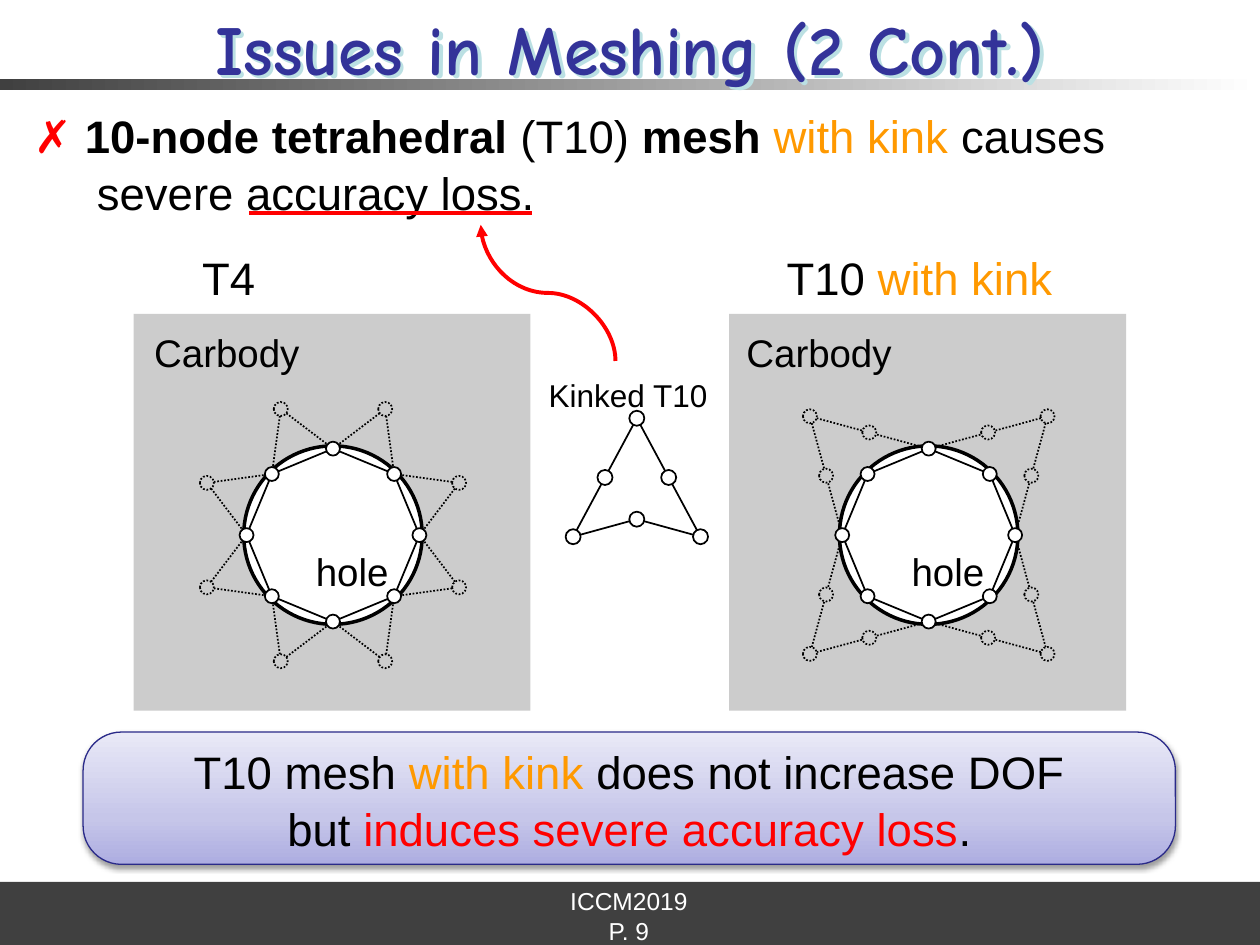
from math import cos, hypot, radians, sin

from lxml import etree
from pptx import Presentation
from pptx.dml.color import RGBColor
from pptx.enum.dml import MSO_LINE
from pptx.enum.shapes import MSO_CONNECTOR, MSO_SHAPE
from pptx.enum.text import MSO_ANCHOR, PP_ALIGN
from pptx.oxml.ns import qn
from pptx.util import Pt

RECT, ROUNDED, OVAL = MSO_SHAPE.RECTANGLE, MSO_SHAPE.ROUNDED_RECTANGLE, MSO_SHAPE.OVAL
STRAIGHT, CURVE = MSO_CONNECTOR.STRAIGHT, MSO_CONNECTOR.CURVE
DOTTED = MSO_LINE.ROUND_DOT
LEFT, CENTER = PP_ALIGN.LEFT, PP_ALIGN.CENTER
TOP, MIDDLE = MSO_ANCHOR.TOP, MSO_ANCHOR.MIDDLE

BLACK, WHITE, RED, ORANGE = "000000", "FFFFFF", "FF0000", "FF9900"
PANEL_GRAY, DARK_GRAY, NAVY = "CCCCCC", "404040", "333399"
PANEL_SIZE = 226.8
RING_RADIUS = 49.4
NODE_SIZE = 8


def color(hex_text):
    return RGBColor.from_string(hex_text)


def style_line(line, line_color, width, dash=None):
    line.color.rgb = color(line_color)
    line.width = Pt(width)
    if dash:
        line.dash_style = dash


def add_box(page, kind, left, top, width, height, fill=None, line=None, weight=1, dash=None):
    box = page.shapes.add_shape(kind, Pt(left), Pt(top), Pt(width), Pt(height))
    box.shadow.inherit = False
    if fill:
        box.fill.solid()
        box.fill.fore_color.rgb = color(fill)
    else:
        box.fill.background()
    if line:
        style_line(box.line, line, weight, dash)
    else:
        box.line.fill.background()
    return box


def add_gradient(box, stops, angle):
    box.fill.gradient()
    box.fill.gradient_angle = angle
    stop_list = box._element.spPr.find(".//" + qn("a:gsLst"))
    for old_stop in list(stop_list):
        stop_list.remove(old_stop)
    for position, stop_color in stops:
        stop = etree.SubElement(stop_list, qn("a:gs"), pos=str(position * 1000))
        etree.SubElement(stop, qn("a:srgbClr"), val=stop_color)


def add_shadow(box, shadow_color, opacity, blur, distance, angle):
    box.shadow.inherit = False
    effects = box._element.spPr.find(qn("a:effectLst"))
    outer = etree.SubElement(effects, qn("a:outerShdw"), blurRad=str(Pt(blur)),
                             dist=str(Pt(distance)), dir=str(angle * 60000), rotWithShape="0")
    tone = etree.SubElement(outer, qn("a:srgbClr"), val=shadow_color)
    etree.SubElement(tone, qn("a:alpha"), val=str(opacity * 1000))


def write_text(box, spans, size=26, font="Arial", align=CENTER, anchor=TOP,
               margin=0, wrap=True, spacing=None, hanging=0):
    """Each span is (text, colour) or (text, colour, bold)."""
    frame = box.text_frame
    frame.word_wrap = wrap
    frame.vertical_anchor = anchor
    frame.margin_left = frame.margin_right = frame.margin_top = frame.margin_bottom = Pt(margin)
    para = frame.paragraphs[0]
    para.alignment = align
    if spacing:
        para.line_spacing = spacing
    if hanging:
        properties = para._p.get_or_add_pPr()
        properties.set("marL", str(Pt(hanging)))
        properties.set("indent", str(-Pt(hanging)))
    for text, text_color, *bold in spans:
        for index, line_text in enumerate(text.split("\n")):
            if index:
                para.add_line_break()
            span = para.add_run()
            span.text = line_text
            span.font.size = Pt(size)
            span.font.name = font
            span.font.bold = bool(bold and bold[0])
            span.font.color.rgb = color(text_color)


def add_text(page, left, top, width, height, spans, **text_format):
    box = page.shapes.add_textbox(Pt(left), Pt(top), Pt(width), Pt(height))
    write_text(box, spans, **text_format)
    return box


def add_line(page, start, end, line_color=BLACK, width=1, dash=None, kind=STRAIGHT):
    line = page.shapes.add_connector(kind, *(Pt(value) for value in (*start, *end)))
    style_line(line.line, line_color, width, dash)
    etree.SubElement(line._element.spPr, qn("a:effectLst"))
    return line


def add_edge(page, start, end, dash=None):
    """Joins two nodes, from rim to rim."""
    dx, dy = end[0] - start[0], end[1] - start[1]
    share = NODE_SIZE / 2 / hypot(dx, dy)
    add_line(page, (start[0] + dx * share, start[1] + dy * share),
             (end[0] - dx * share, end[1] - dy * share), dash=dash)


def add_node(page, point, fill=WHITE, dash=None, size=NODE_SIZE):
    add_box(page, OVAL, point[0] - size / 2, point[1] - size / 2, size, size,
            fill, BLACK, dash=dash)


def midpoint(first, second):
    return (first[0] + second[0]) / 2, (first[1] + second[1]) / 2


def polar(center, radius, degrees):
    angle = radians(degrees)
    return center[0] + radius * cos(angle), center[1] + radius * sin(angle)


def add_mesh_panel(page, left, top, label_offset, outer_radius, outer_step, with_midnodes):
    # Car body, hole and labels
    center = left + 114, top + 126.5
    add_box(page, RECT, left, top, PANEL_SIZE, PANEL_SIZE, PANEL_GRAY)
    add_box(page, OVAL, center[0] - 51, center[1] - 51, 102, 102, WHITE, BLACK, 2)
    carbody = add_box(page, RECT, left + label_offset, top + 8.6, 85, 26.6, PANEL_GRAY)
    write_text(carbody, [("Carbody", BLACK)], size=22)
    add_text(page, left + 92, top + 134, 66, 26.6, [("hole", BLACK)], size=22)

    # Ring of nodes along the hole
    ring = {degrees: polar(center, RING_RADIUS, degrees) for degrees in range(0, 360, 45)}
    for degrees, node in ring.items():
        add_edge(page, node, ring[(degrees + 45) % 360])
    for node in ring.values():
        add_node(page, node)

    # Outer nodes, each joined to the two ring nodes beside it
    for start in range(0, 360, outer_step):
        outer = polar(center, outer_radius, start + outer_step / 2)
        for degrees in (start, (start + outer_step) % 360):
            add_edge(page, outer, ring[degrees], DOTTED)
            if with_midnodes:
                add_node(page, midpoint(outer, ring[degrees]), PANEL_GRAY, DOTTED)
        add_node(page, outer, PANEL_GRAY, DOTTED)


def add_kinked_element(page, left, top, width, height):
    add_text(page, left - 28, top - 24.4, 118.8, 21.6, [("Kinked T10", BLACK)], size=18)
    apex = left + width / 2, top
    kink = left + width / 2, top + height - 10
    corners = [(left, top + height), (left + width, top + height)]
    nodes = [apex, kink, *corners]
    for corner in corners:
        add_edge(page, apex, corner)
        add_edge(page, kink, corner)
        nodes.append(midpoint(apex, corner))
    for node in nodes:
        add_node(page, node, size=8.6)


def add_header(page, left, top, width, height):
    bar = add_box(page, RECT, left, top + 42.5, width, 5.8, WHITE)
    add_gradient(bar, [(0, DARK_GRAY), (100, WHITE)], 0)
    title = add_text(page, left, top, width, height,
                     [("Issues in Meshing (2 Cont.)", NAVY, True)], size=40, font="Comic Neue")
    add_shadow(title, "BBE0E3", 100, 0, 2.8, 45)


def add_statement(page, left, top, width, height):
    add_text(page, left, top, width, height, [
        ("✗ ", RED, True), ("10-node tetrahedral ", BLACK, True), ("(T10) ", BLACK),
        ("mesh ", BLACK, True), ("with kink ", ORANGE),
        ("causes\nsevere accuracy loss.", BLACK),
    ], align=LEFT, spacing=1.05, hanging=36)
    # Underline, and the arrow that points to it
    add_line(page, (left + 123, top + 61.7), (left + 284.4, top + 61.7), RED, 2.25)
    arrow = add_line(page, (274.3, 205.9), (352.1, 128.9), RED, 2.25, kind=CURVE)
    arrow._element.spPr.find(qn("a:xfrm")).set("rot", str(270 * 60000))
    etree.SubElement(arrow._element.spPr.find(qn("a:ln")), qn("a:tailEnd"), type="triangle")


def add_conclusion(page, left, top, width, height):
    box = add_box(page, ROUNDED, left, top, width, height, WHITE, "2A2A89", 0.75)
    box.adjustments[0] = 0.29
    add_gradient(box, [(0, "ADADE1"), (35, "C6C6E9"), (100, "E9E9F7")], 90)
    add_shadow(box, BLACK, 38, 3.1, 1.6, 90)
    write_text(box, [
        ("T10 mesh ", BLACK), ("with kink ", ORANGE), ("does not increase DOF\nbut ", BLACK),
        ("induces severe accuracy loss", RED), (".", BLACK),
    ], anchor=MIDDLE, spacing=1.05)


def add_footer(page, left, top, width, height):
    add_box(page, RECT, left, top, width, height, DARK_GRAY)
    for text, offset, text_height in (("ICCM2019", 0, 21.6), ("P. 9", 20.2, 15.8)):
        add_text(page, left + 318, top + offset, 82.8, text_height, [(text, WHITE)],
                 size=14, anchor=MIDDLE, margin=3, wrap=False)


def main():
    deck = Presentation()
    deck.slide_width, deck.slide_height = Pt(720), Pt(540)
    page = deck.slides.add_slide(deck.slide_layouts[6])
    add_header(page, 0, 2.9, 720, 49)
    add_footer(page, 0, 504, 720, 36)
    add_statement(page, 19.4, 60, 680, 64)
    add_text(page, 115.5, 142.8, 60, 30, [("T4", BLACK)], align=LEFT)
    add_text(page, 449.5, 142.8, 180, 30, [("T10 ", BLACK), ("with kink", ORANGE)], align=LEFT)
    add_mesh_panel(page, 76.3, 179.3, 10.8, 78, 45, with_midnodes=False)
    add_mesh_panel(page, 416.7, 179.3, 8.8, 96, 90, with_midnodes=True)
    add_kinked_element(page, 327.5, 239, 72.8, 67.7)
    add_conclusion(page, 47.5, 418.3, 624.2, 75.6)
    deck.save("out.pptx")


if __name__ == "__main__":
    main()
